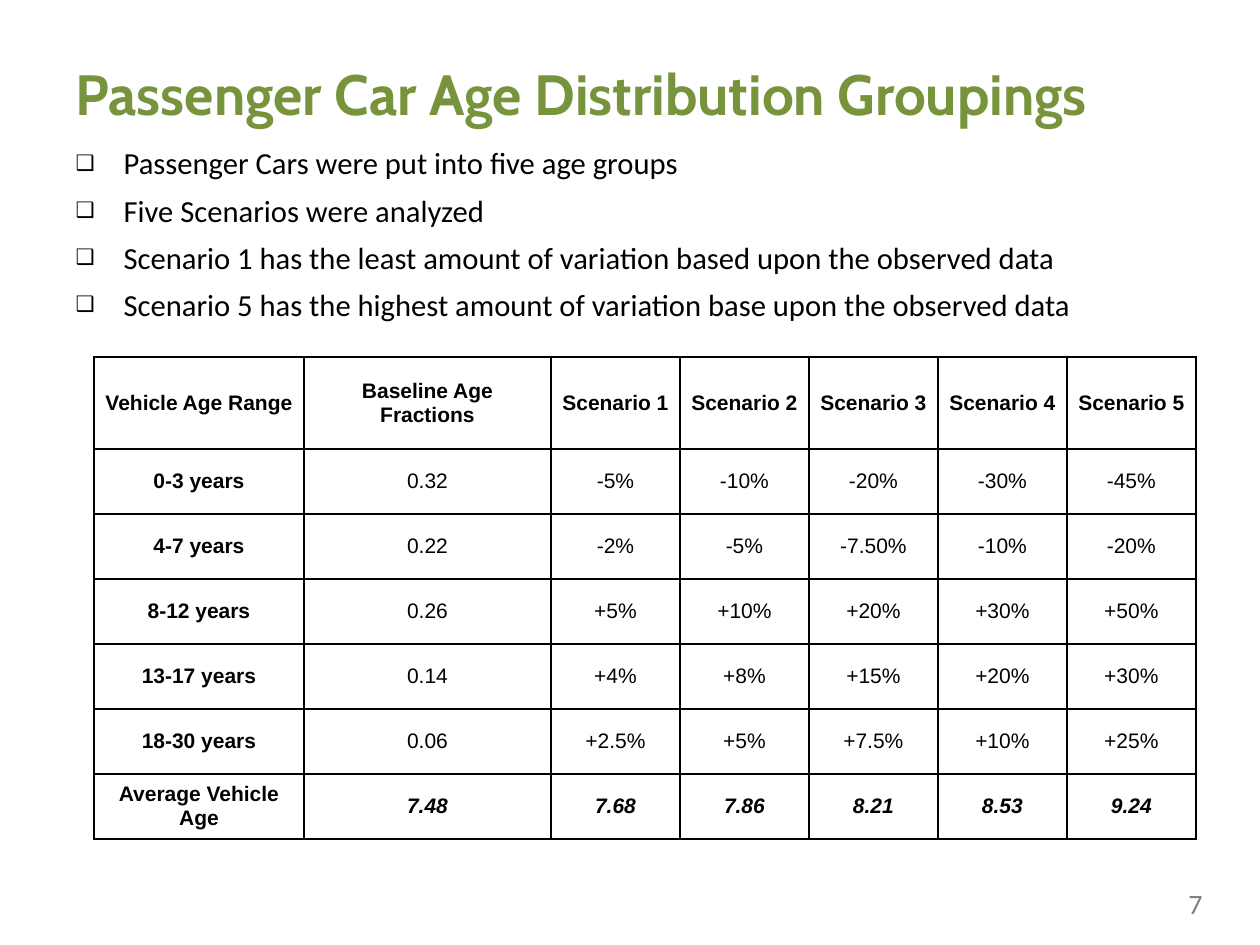
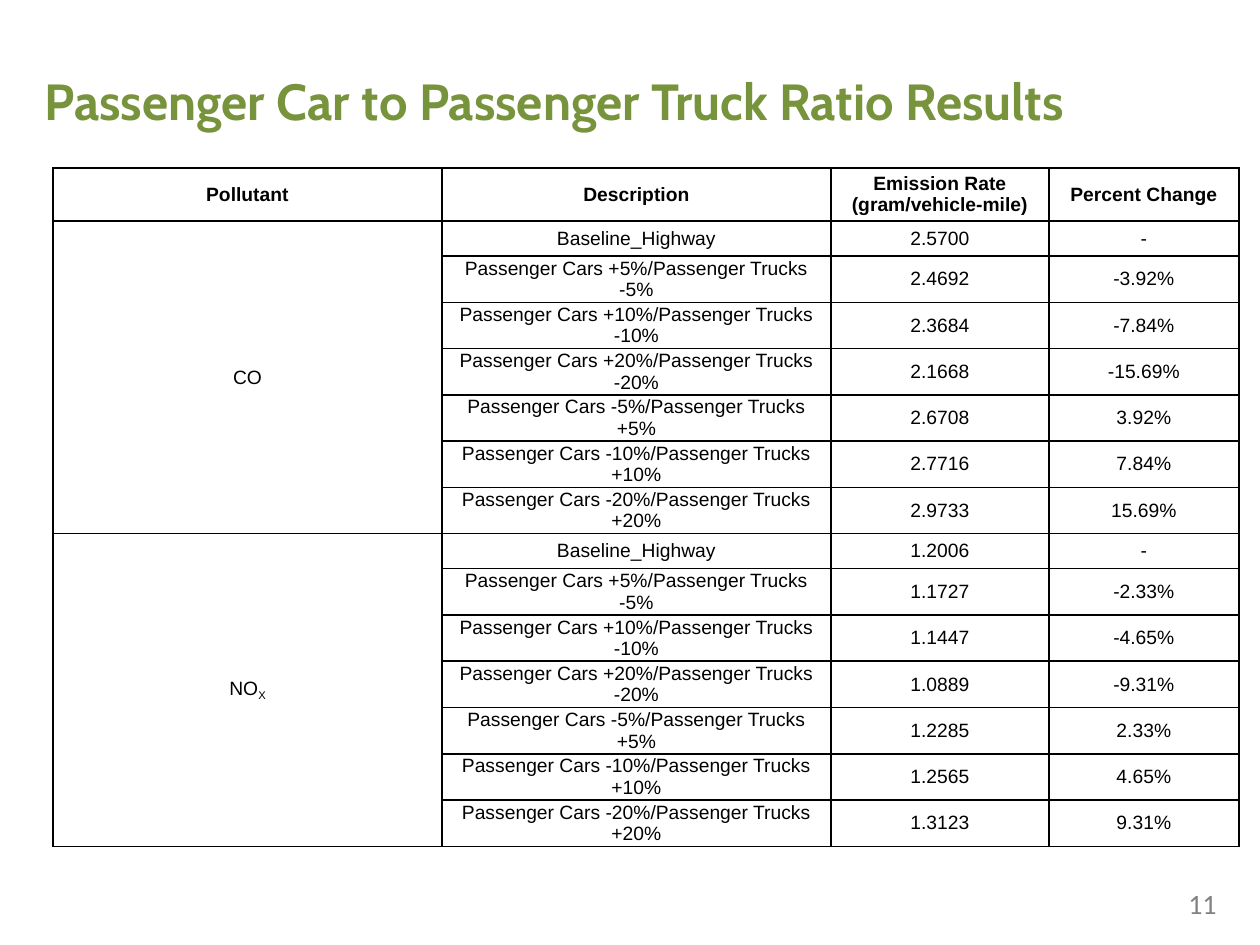
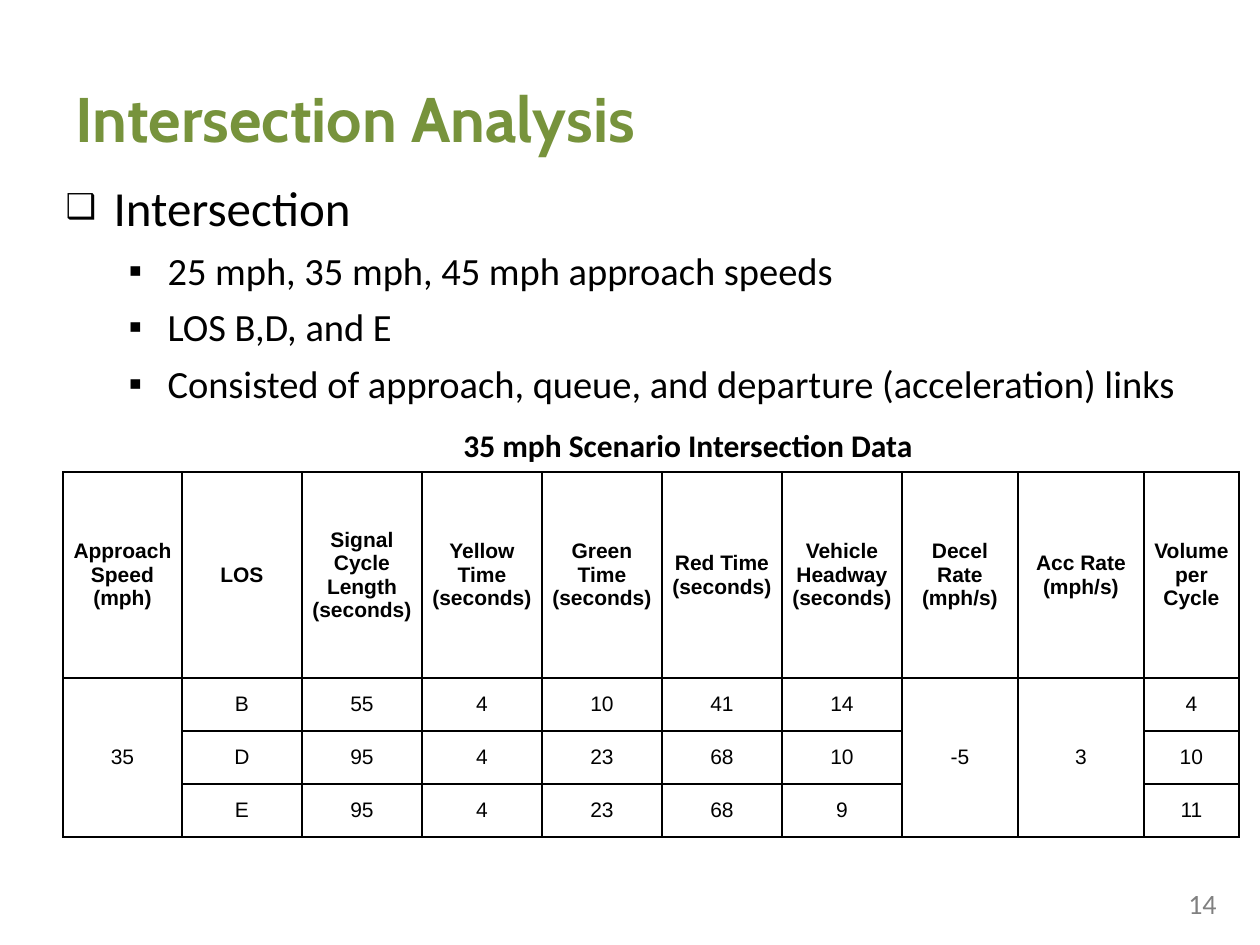
from lxml import etree
from pptx import Presentation
from pptx.dml.color import RGBColor
from pptx.enum.text import MSO_ANCHOR, MSO_AUTO_SIZE, PP_ALIGN
from pptx.oxml.ns import qn
from pptx.util import Emu, Pt

LEFT, CENTER = PP_ALIGN.LEFT, PP_ALIGN.CENTER
MIDDLE = MSO_ANCHOR.MIDDLE
NO_FIT = MSO_AUTO_SIZE.NONE
LAYOUT_CONTENT, LAYOUT_TITLE_ONLY = 1, 5
GREEN, BLACK, GRAY = "77933C", "000000", "808080"
HEADING_FONT, BODY_FONT, TABLE_FONT = "Cabin", "Calibri", "Arial"
BULLETS = [
    {"char": "❑", "percent": 70, "margin": 48, "hang": 48},
    {"char": "▪", "percent": 100, "margin": 102, "hang": 39},
]

AGE_POINTS = [
    (0, "Passenger Cars were put into five age groups", 17.5),
    (0, "Five Scenarios were analyzed", 17.5),
    (0, "Scenario 1 has the least amount of variation based upon the observed data", 17.5),
    (0, "Scenario 5 has the highest amount of variation base upon the observed data", 17.5),
]
AGE_ROWS = [
    ["Vehicle Age Range", "Baseline Age Fractions"] + [f"Scenario {n}" for n in range(1, 6)],
    ["0-3 years", "0.32", "-5%", "-10%", "-20%", "-30%", "-45%"],
    ["4-7 years", "0.22", "-2%", "-5%", "-7.50%", "-10%", "-20%"],
    ["8-12 years", "0.26", "+5%", "+10%", "+20%", "+30%", "+50%"],
    ["13-17 years", "0.14", "+4%", "+8%", "+15%", "+20%", "+30%"],
    ["18-30 years", "0.06", "+2.5%", "+5%", "+7.5%", "+10%", "+25%"],
    ["Average Vehicle Age", "7.48", "7.68", "7.86", "8.21", "8.53", "9.24"],
]

RATIO_HEADINGS = ["Pollutant", "Description", "Emission Rate (gram/vehicle-mile)", "Percent Change"]
FLEET_SHIFTS = [("+", 5, "-"), ("+", 10, "-"), ("+", 20, "-"), ("-", 5, "+"), ("-", 10, "+"), ("-", 20, "+")]
FLEET_MIXES = ["Baseline_Highway"] + [
    f"Passenger Cars {cars}{share}%/Passenger Trucks {trucks}{share}%" for cars, share, trucks in FLEET_SHIFTS
]
POLLUTANTS = [
    ("CO",
     ["2.5700", "2.4692", "2.3684", "2.1668", "2.6708", "2.7716", "2.9733"],
     ["-", "-3.92%", "-7.84%", "-15.69%", "3.92%", "7.84%", "15.69%"]),
    (("NO", "X"),
     ["1.2006", "1.1727", "1.1447", "1.0889", "1.2285", "1.2565", "1.3123"],
     ["-", "-2.33%", "-4.65%", "-9.31%", "2.33%", "4.65%", "9.31%"]),
]

INTERSECTION_POINTS = [
    (0, "Intersection", 28),
    (1, "25 mph, 35 mph, 45 mph approach speeds", 22),
    (1, "LOS B,D, and E", 22),
    (1, "Consisted of approach, queue, and departure (acceleration) links", 22),
]
INTERSECTION_ROWS = [
    ["Approach Speed (mph)", "LOS", "Signal Cycle Length (seconds)", "Yellow Time (seconds)",
     "Green Time (seconds)", "Red Time (seconds)", "Vehicle Headway (seconds)",
     "Decel Rate (mph/s)", "Acc Rate (mph/s)", "Volume per Cycle"],
    ["35", "B", "55", "4", "10", "41", "14", "-5", "3", "4"],
    [None, "D", "95", "4", "23", "68", "10", None, None, "10"],
    [None, "E", "95", "4", "23", "68", "9", None, None, "11"],
]


def px(length):
    return Emu(round(length * 914400 / 126))


def color(hex_string):
    return RGBColor.from_string(hex_string)


def style(paragraph, size, face, shade, bold=False, italic=False):
    font = paragraph.font
    font.size, font.name = Pt(size), face
    font.bold, font.italic = bold, italic
    font.color.rgb = color(shade)


def place(box, bounds):
    box.left, box.top, box.width, box.height = map(px, bounds)


def add_slide(deck, layout, title, title_size, title_bounds, number):
    slide = deck.slides.add_slide(deck.slide_layouts[layout])
    heading = slide.shapes.title
    place(heading, title_bounds)
    frame = heading.text_frame
    frame.text = title
    frame.auto_size, frame.vertical_anchor = NO_FIT, MIDDLE
    frame.paragraphs[0].alignment = LEFT
    style(frame.paragraphs[0], title_size, HEADING_FONT, GREEN, bold=True)
    add_label(slide, str(number), (1176, 880, 63, 47), 16, GRAY)
    return slide


def add_label(slide, text, bounds, size, shade, bold=False):
    frame = slide.shapes.add_textbox(*map(px, bounds)).text_frame
    frame.text = text
    style(frame.paragraphs[0], size, BODY_FONT, shade, bold)


def fill_points(slide, points, bounds):
    body = slide.placeholders[1]
    place(body, bounds)
    frame = body.text_frame
    frame.auto_size = NO_FIT
    for index, (level, text, size) in enumerate(points):
        paragraph = frame.add_paragraph() if index else frame.paragraphs[0]
        paragraph.text, paragraph.level = text, level
        bullet = BULLETS[level]
        properties = paragraph._p.get_or_add_pPr()
        properties.set("marL", str(px(bullet["margin"])))
        properties.set("indent", str(-px(bullet["hang"])))
        etree.SubElement(properties, qn("a:buSzPct"), val=str(bullet["percent"] * 1000))
        etree.SubElement(properties, qn("a:buFont"), typeface=TABLE_FONT)
        etree.SubElement(properties, qn("a:buChar"), char=bullet["char"])
        paragraph.space_before = Pt(6 if index else 0)
        style(paragraph, size, BODY_FONT, BLACK)


def outline(cell):
    properties = cell._tc.get_or_add_tcPr()
    for position, side in enumerate(("lnL", "lnR", "lnT", "lnB")):
        line = etree.Element(qn(f"a:{side}"), w=str(Pt(1)))
        ink = etree.SubElement(line, qn("a:solidFill"))
        etree.SubElement(ink, qn("a:srgbClr"), val=BLACK)
        properties.insert(position, line)


def fill_cell(cell, value, size, bold, italic):
    cell.fill.background()
    outline(cell)
    cell.vertical_anchor = MIDDLE
    cell.margin_left = cell.margin_right = px(9)
    cell.margin_top = cell.margin_bottom = 0
    paragraph = cell.text_frame.paragraphs[0]
    paragraph.alignment = CENTER
    style(paragraph, size, TABLE_FONT, BLACK, bold, italic)
    base, *subscripts = value if isinstance(value, tuple) else (value or "",)
    if base:
        paragraph.add_run().text = base
    for subscript in subscripts:
        run = paragraph.add_run()
        run.text = subscript
        run._r.get_or_add_rPr().set("baseline", "-25000")


def add_grid(slide, rows, left, top, widths, heights, size, bold_labels=False, summary=False):
    bounds = map(px, (left, top, sum(widths), sum(heights)))
    table = slide.shapes.add_table(len(rows), len(widths), *bounds).table
    table.first_row = table.horz_banding = False
    for column, width in zip(table.columns, widths):
        column.width = px(width)
    for row, height in zip(table.rows, heights):
        row.height = px(height)
    last = len(rows) - 1
    for r, values in enumerate(rows):
        for c, value in enumerate(values):
            total = summary and r == last
            bold = r == 0 or total or (bold_labels and c == 0)
            fill_cell(table.cell(r, c), value, size, bold, total and c > 0)
    for c in range(len(widths)):
        starts = [r for r, values in enumerate(rows) if values[c] is not None]
        for start, following in zip(starts, starts[1:] + [len(rows)]):
            if following - start > 1:
                table.cell(start, c).merge(table.cell(following - 1, c))


def main():
    deck = Presentation()
    deck.slide_width, deck.slide_height = px(1260), px(945)

    ages = add_slide(deck, LAYOUT_CONTENT, "Passenger Car Age Distribution Groupings",
                     32.4, (63, 38, 1134, 110), 7)
    fill_points(ages, AGE_POINTS, (63, 138, 1144, 168))
    add_grid(ages, AGE_ROWS, 94, 357, [210, 247] + [129] * 5, [92] + [65] * 6, 12,
             bold_labels=True, summary=True)

    ratios = add_slide(deck, LAYOUT_TITLE_ONLY, "Passenger Car to Passenger Truck Ratio Results",
                       29, (32, 21, 1166, 158), 11)
    ratio_rows = [RATIO_HEADINGS]
    for pollutant, rates, changes in POLLUTANTS:
        for index, result in enumerate(zip(FLEET_MIXES, rates, changes)):
            ratio_rows.append([None if index else pollutant, *result])
    add_grid(ratios, ratio_rows, 53, 168, [389, 389, 218, 190],
             [53] + ([35] + [45] * len(FLEET_SHIFTS)) * len(POLLUTANTS), 11)

    intersection = add_slide(deck, LAYOUT_CONTENT, "Intersection Analysis", 36, (63, 38, 1134, 158), 14)
    fill_points(intersection, INTERSECTION_POINTS, (53, 171, 1144, 273))
    add_grid(intersection, INTERSECTION_ROWS, 63, 472, [119] + [120] * 6 + [116, 126, 95],
             [206] + [53] * 3, 12)
    add_label(intersection, "35 mph Scenario Intersection Data", (451, 420, 479, 50), 18, BLACK, bold=True)

    deck.save("out.pptx")


if __name__ == "__main__":
    main()
